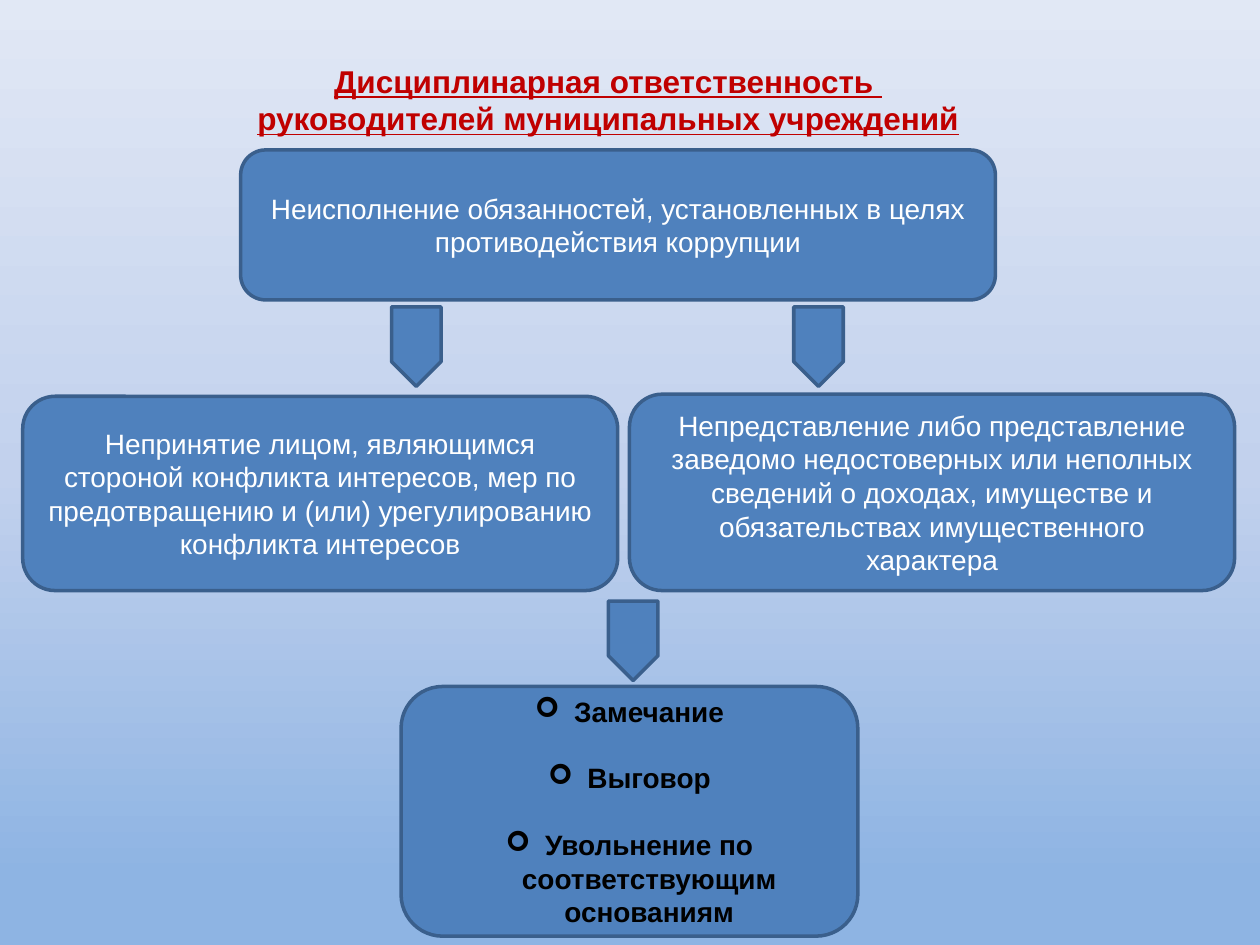
from copy import deepcopy

from lxml.etree import SubElement
from pptx import Presentation
from pptx.dml.color import RGBColor
from pptx.enum.shapes import MSO_SHAPE
from pptx.enum.text import MSO_ANCHOR, MSO_AUTO_SIZE, PP_ALIGN
from pptx.oxml.ns import qn
from pptx.util import Pt

COLORS = {
    "sky_low": "8EB4E3", "sky_mid": "C2D1ED", "sky_high": "E1E8F5",
    "title": "C00000", "fill": "4F81BD", "line": "3A5F8C",
    "light": "FFFFFF", "dark": "000000",
}
TITLE = ["Дисциплинарная ответственность ", "руководителей муниципальных учреждений"]
# Each cause: left, top, width, height, text
CAUSES = [
    (137.5, 85.7, 431.3, 85.7,
     "Неисполнение обязанностей, установленных в целях противодействия коррупции"),
    (13, 226.5, 340, 111,
     "Непринятие лицом, являющимся стороной конфликта интересов, мер по "
     "предотвращению и (или) урегулированию конфликта интересов"),
    (359.7, 225.3, 345.8, 112.2,
     "Непредставление либо представление заведомо недостоверных или неполных "
     "сведений о доходах, имуществе и обязательствах имущественного характера"),
]
ARROWS = [(223.8, 175.4), (453.6, 175.4), (347.7, 343.5)]
PENALTIES = ["Замечание", "Выговор", "Увольнение по соответствующим основаниям"]


def color(name):
    return RGBColor.from_string(COLORS[name])


def paint_background(page):
    fill = page.background.fill
    fill.gradient()
    fill.gradient_angle = 90
    stop_list = page.element.find(".//" + qn("a:gsLst"))
    stop_list.append(deepcopy(stop_list[-1]))
    steps = [("sky_low", 0.07), ("sky_mid", 0.5), ("sky_high", 1)]
    for stop, (name, position) in zip(fill.gradient_stops, steps):
        stop.color.rgb = color(name)
        stop.position = position


def add_shape(page, kind, left, top, width, height):
    shape = page.shapes.add_shape(kind, Pt(left), Pt(top), Pt(width), Pt(height))
    shape.shadow.inherit = False
    shape.fill.solid()
    shape.fill.fore_color.rgb = color("fill")
    shape.line.color.rgb = color("line")
    shape.line.width = Pt(2)
    return shape


def add_bullet(para):
    properties = para._p.get_or_add_pPr()
    properties.set("marL", str(Pt(22.5)))
    properties.set("indent", str(-Pt(22.5)))
    SubElement(properties, qn("a:buFont"), typeface="Wingdings")
    SubElement(properties, qn("a:buChar"), char="➢")


def write(frame, lines, size, ink, bold=False, underline=False, bullets=False, gap=0):
    for index, line in enumerate(lines):
        para = frame.add_paragraph() if index else frame.paragraphs[0]
        para.alignment = PP_ALIGN.CENTER
        if index and gap:
            para.space_before = Pt(gap)
        if bullets:
            add_bullet(para)
        span = para.add_run()
        span.text = line
        font = span.font
        font.name, font.size, font.bold, font.underline = "Arial", Pt(size), bold, underline
        font.color.rgb = color(ink)


def add_title(page):
    box = page.shapes.add_textbox(Pt(137.5), Pt(31.7), Pt(420), Pt(51))
    frame = box.text_frame
    frame.word_wrap = False
    frame.auto_size = MSO_AUTO_SIZE.SHAPE_TO_FIT_TEXT
    write(frame, TITLE, 18, "title", bold=True, underline=True)


def add_card(page, left, top, width, height, lines, ink, **style):
    card = add_shape(page, MSO_SHAPE.ROUNDED_RECTANGLE, left, top, width, height)
    frame = card.text_frame
    frame.word_wrap = True
    frame.vertical_anchor = MSO_ANCHOR.MIDDLE
    write(frame, lines, 16, ink, **style)


def add_arrow(page, left, top):
    arrow = add_shape(page, MSO_SHAPE.DOWN_ARROW, left, top, 28.3, 45.4)
    arrow.adjustments[0] = 1
    arrow.adjustments[1] = 0.5


def main():
    deck = Presentation()
    deck.slide_width, deck.slide_height = Pt(720), Pt(540)
    page = deck.slides.add_slide(deck.slide_layouts[6])
    paint_background(page)
    add_title(page)

    # Penalties at the foot of the scheme
    add_card(page, 229.2, 392.3, 261, 142.7, PENALTIES, "dark",
             bold=True, bullets=True, gap=19)

    # Causes and the arrows between the levels
    for *place, text in CAUSES:
        add_card(page, *place, [text], "light")
    for left, top in ARROWS:
        add_arrow(page, left, top)

    deck.save("out.pptx")


if __name__ == "__main__":
    main()
